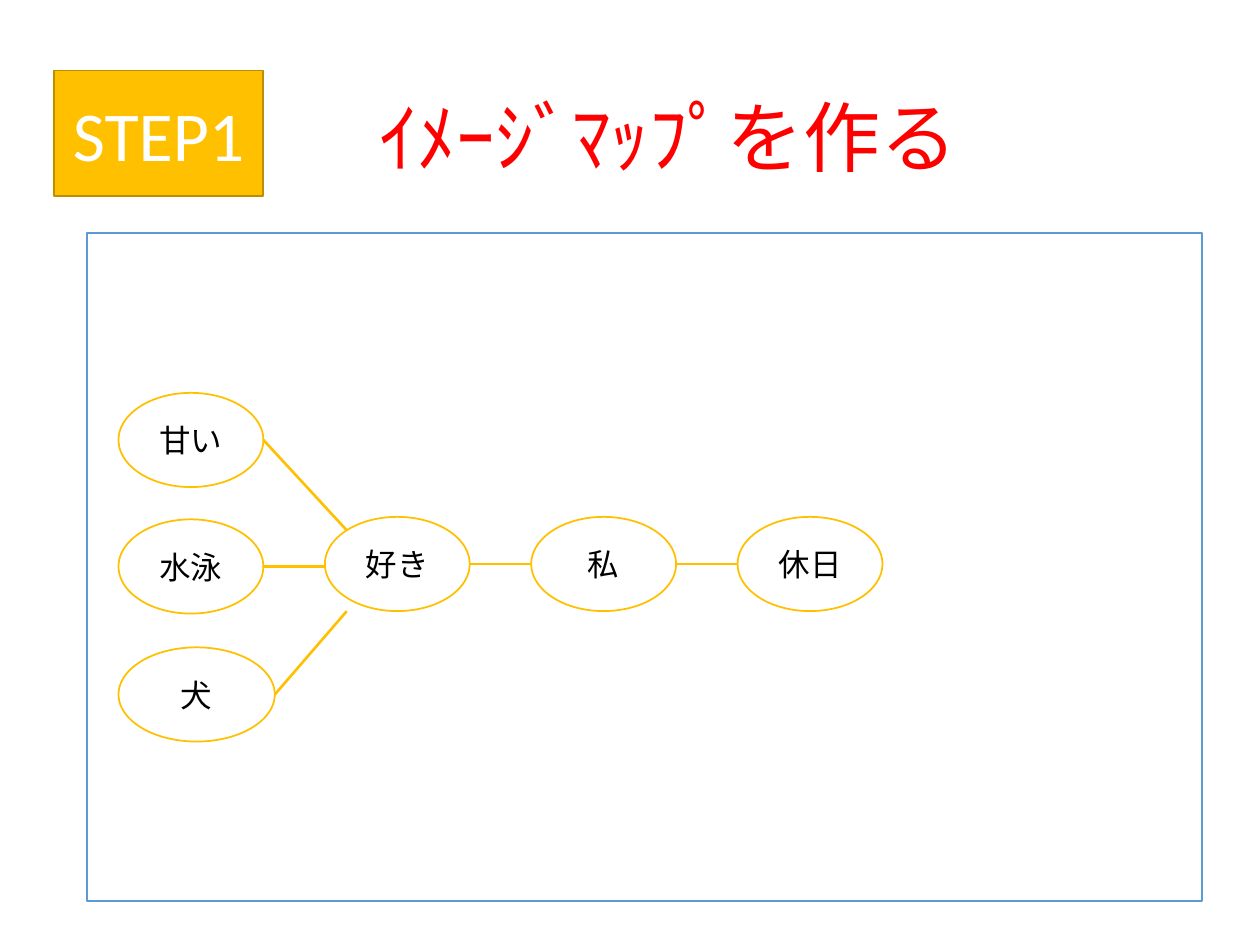
from lxml import etree
from pptx import Presentation
from pptx.dml.color import RGBColor
from pptx.enum.shapes import MSO_CONNECTOR, MSO_SHAPE
from pptx.enum.text import MSO_ANCHOR, PP_ALIGN
from pptx.oxml.ns import qn
from pptx.util import Cm, Pt

RECT, OVAL = MSO_SHAPE.RECTANGLE, MSO_SHAPE.OVAL
STRAIGHT = MSO_CONNECTOR.STRAIGHT
MIDDLE, CENTER = MSO_ANCHOR.MIDDLE, PP_ALIGN.CENTER

WHITE, BLACK, RED = "FFFFFF", "000000", "FF0000"
AMBER, DARK_AMBER, BLUE = "FFC000", "BD8E00", "5B9BD5"


def rgb(value):
    return RGBColor.from_string(value)


class SlideBuilder:
    font = "Calibri"

    def __init__(self, slide):
        self.slide = slide

    def add_text(self, sp, text, size, color, spacing=1.0):
        tf = sp.text_frame
        tf.word_wrap = True
        tf.vertical_anchor = MIDDLE
        p = tf.paragraphs[0]
        p.alignment = CENTER
        p.line_spacing = spacing
        r = p.add_run()
        r.text = text
        r.font.name = self.font
        r.font.size = Pt(size)
        r.font.color.rgb = rgb(color)

    def title(self, x, y, w, h, text):
        sp = self.slide.shapes.add_textbox(Cm(x), Cm(y), Cm(w), Cm(h))
        self.add_text(sp, text, 44, RED, 0.9)

    def shape(self, kind, x, y, w, h, fill, line):
        sp = self.slide.shapes.add_shape(kind, Cm(x), Cm(y), Cm(w), Cm(h))
        sp.shadow.inherit = False
        sp.fill.solid()
        sp.fill.fore_color.rgb = rgb(fill)
        sp.line.color.rgb = rgb(line)
        sp.line.width = Pt(1)
        return sp

    def node(self, x, y, w, h, text):
        sp = self.shape(OVAL, x, y, w, h, WHITE, AMBER)
        self.add_text(sp, text, 18, BLACK)

    def link(self, x1, y1, x2, y2):
        cn = self.slide.shapes.add_connector(STRAIGHT, Cm(x1), Cm(y1), Cm(x2), Cm(y2))
        cn.line.color.rgb = rgb(AMBER)
        cn.line.width = Pt(1.5)
        etree.SubElement(cn._element.spPr, qn("a:effectLst"))


def main():
    prs = Presentation()
    prs.slide_width, prs.slide_height = Cm(25.4), Cm(19.05)
    s = SlideBuilder(prs.slides.add_slide(prs.slide_layouts[6]))

    # Title and frame
    s.title(1.75, 1.02, 21.9, 3.68, "　ｲﾒｰｼﾞﾏｯﾌﾟを作る")
    s.shape(RECT, 1.75, 4.7, 22.48, 13.46, WHITE, BLUE)

    # Main row: equally spaced nodes joined along their centre line
    left, step, node_w, node_h = 2.39, 4.16, 2.92, 1.9
    row_top = 10.42
    row_mid = row_top + node_h / 2
    for i, text in enumerate(["好き", "私", "休日"], start=1):
        x = left + i * step
        if i > 1:
            s.link(x - step + node_w, row_mid, x, row_mid)
        s.node(x, row_top, node_w, node_h, text)

    # Branches from the left column to the first node of the row
    hub_x = left + step
    corner_x = hub_x + 0.44
    branches = [
        ("水泳", 10.47, node_w, hub_x, 11.42),
        ("甘い", 7.92, node_w, corner_x, 10.69),
        ("犬", 13.05, 3.15, corner_x, row_top + node_h),
    ]
    for text, top, width, end_x, end_y in branches:
        s.link(left + width, top + node_h / 2, end_x, end_y)
        s.node(left, top, width, node_h, text)

    # Step label
    label = s.shape(RECT, 1.09, 1.42, 4.22, 2.54, AMBER, DARK_AMBER)
    s.add_text(label, "STEP1", 40, WHITE)

    prs.save("out.pptx")


if __name__ == "__main__":
    main()
